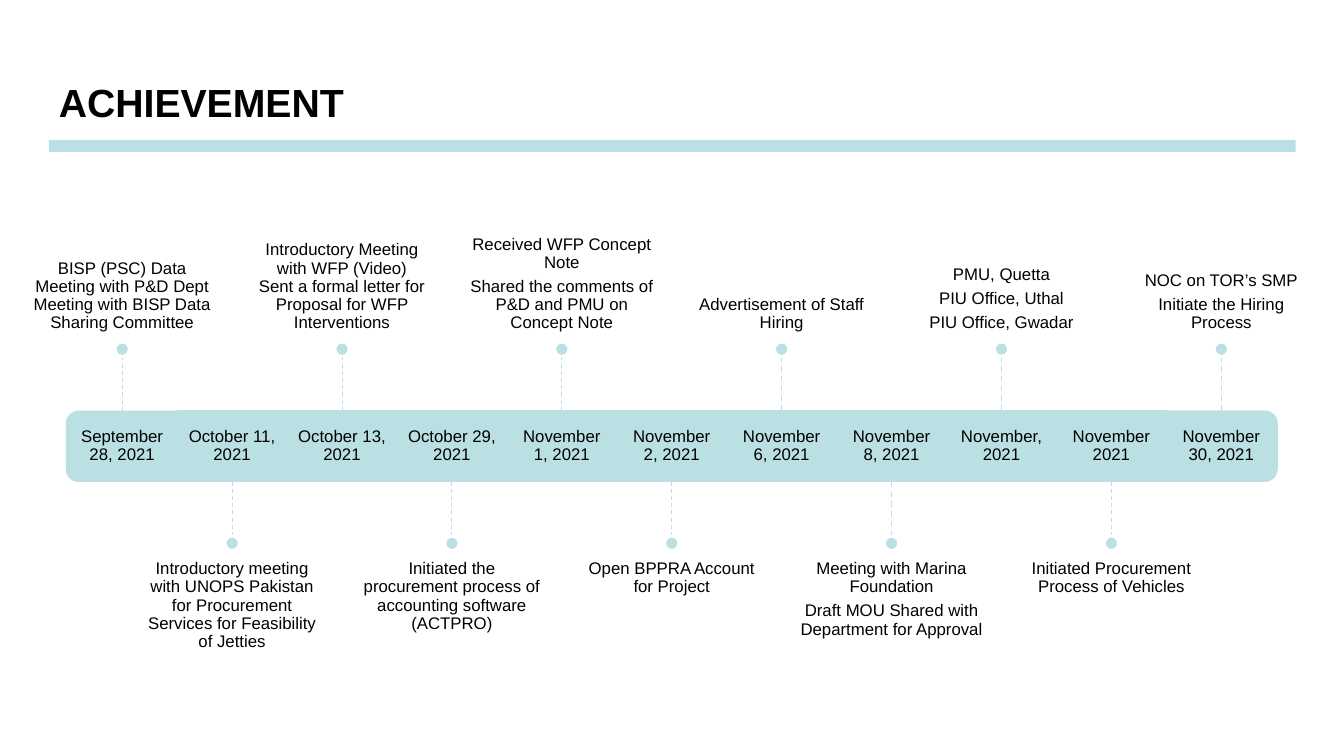
import copy

import pptx
import pptx.dml.color
import pptx.enum.dml
import pptx.enum.shapes
import pptx.enum.text
import pptx.oxml
import pptx.oxml.ns
import pptx.util

Cm, Pt = pptx.util.Cm, pptx.util.Pt
RGBColor = pptx.dml.color.RGBColor
Shape = pptx.enum.shapes.MSO_SHAPE
Anchor = pptx.enum.text.MSO_ANCHOR
Align = pptx.enum.text.PP_ALIGN
qn = pptx.oxml.ns.qn

AQUA = RGBColor(0xBB, 0xE0, 0xE3)
WHITE = RGBColor(0xFF, 0xFF, 0xFF)
BLACK = RGBColor(0x00, 0x00, 0x00)

# Content: date, stem width in points, paragraphs (\v breaks a line)
TITLE = "ACHIEVEMENT"
EVENTS = [
    ("September 28, 2021", 0.75,
     ["BISP (PSC) Data\vMeeting with P&D Dept\vMeeting with BISP Data Sharing Committee"]),
    ("October 11, 2021", 0.75,
     ["Introductory meeting with UNOPS Pakistan for Procurement Services for Feasibility of Jetties"]),
    ("October 13, 2021", 0.75,
     ["Introductory Meeting with WFP (Video)\vSent a formal letter for Proposal for WFP Interventions"]),
    ("October 29, 2021", 0.75,
     ["Initiated the procurement process of accounting software (ACTPRO)"]),
    ("November 1, 2021", 0.75,
     ["Received WFP Concept Note",
      "Shared the comments of P&D and PMU on Concept Note"]),
    ("November 2, 2021", 0.75, ["Open BPPRA Account for Project"]),
    ("November 6, 2021", 1, ["Advertisement of Staff Hiring"]),
    ("November 8, 2021", 1,
     ["Meeting with Marina Foundation",
      "Draft MOU Shared with Department for Approval"]),
    ("November, 2021", 1,
     ["PMU, Quetta", "PIU Office, Uthal", "PIU Office, Gwadar"]),
    ("November 2021", 0.75, ["Initiated Procurement Process of Vehicles"]),
    ("November 30, 2021", 1,
     ["NOC on TOR’s SMP", "Initiate the Hiring Process"]),
]

# Layout rules
FIRST_CENTRE, PITCH = Cm(3.08), Cm(2.77)
BAND_TOP, BAND_HEIGHT = Cm(10.38), Cm(1.73)
BAND_BOTTOM = BAND_TOP + BAND_HEIGHT
STEM, DOT = Cm(1.4), Cm(0.36)
NOTE_WIDTH, NOTE_HEIGHT = Cm(4.62), Cm(6.07)
INSET = Cm(0.25)


def set_values(target, values):
    for name, value in values.items():
        setattr(target, name, value)


def write(frame, texts, anchor, insets):
    left, top, right, bottom = insets
    set_values(frame, {"word_wrap": True, "vertical_anchor": anchor,
                       "margin_left": left, "margin_top": top,
                       "margin_right": right, "margin_bottom": bottom})
    for index, text in enumerate(texts):
        para = frame.add_paragraph() if index else frame.paragraphs[0]
        para.text = text
        set_values(para, {"alignment": Align.CENTER, "line_spacing": 0.9,
                          "space_after": Pt(4.2)})
        for span in para.runs:
            set_values(span.font, {"name": "Arial", "size": Pt(12)})
            span.font.color.rgb = BLACK
        # Line breaks take the same size as the text
        for line_break in para._p.findall(qn("a:br")):
            line_break.insert(0, copy.deepcopy(para.runs[0]._r.find(qn("a:rPr"))))


def add_filled(page, kind, box, line_color=None):
    shape = page.shapes.add_shape(kind, *box)
    shape.shadow.inherit = False
    shape.fill.solid()
    shape.fill.fore_color.rgb = AQUA
    if line_color is None:
        shape.line.fill.background()
    else:
        shape.line.color.rgb = line_color
        shape.line.width = Pt(2)
    return shape


def add_date(page, date, centre, rotation):
    left = centre - PITCH // 2
    box = (left, BAND_TOP, PITCH, BAND_HEIGHT)
    if rotation:
        # Rounded end: drawn upright, then turned about its middle
        middle = BAND_TOP + BAND_HEIGHT // 2
        turned = (centre - BAND_HEIGHT // 2, middle - PITCH // 2, BAND_HEIGHT, PITCH)
        cell = add_filled(page, Shape.ROUND_2_SAME_RECTANGLE, turned, AQUA)
        cell.rotation = rotation
        label = page.shapes.add_textbox(*box)
    else:
        cell = label = add_filled(page, Shape.RECTANGLE, box, AQUA)
    write(label.text_frame, [date], Anchor.MIDDLE, [INSET] * 4)
    return cell


def add_stem(page, cell, centre, start, end, width, site):
    stem = page.shapes.add_connector(
        pptx.enum.shapes.MSO_CONNECTOR.STRAIGHT, centre, start, centre, end)
    if not cell.rotation:
        stem.end_connect(cell, site)
    stem.line.color.rgb = AQUA
    set_values(stem.line, {"width": Pt(width),
                           "dash_style": pptx.enum.dml.MSO_LINE.DASH})
    stem._element.spPr.append(pptx.oxml.parse_xml(
        '<a:effectLst xmlns:a="http://schemas.openxmlformats.org/drawingml/2006/main"/>'))


def add_event(page, index, date, width, texts):
    centre = FIRST_CENTRE + index * PITCH
    rotation = {0: 270, len(EVENTS) - 1: 90}.get(index, 0)
    cell = add_date(page, date, centre, rotation)
    # Events alternate above and below the band
    if index % 2 == 0:
        start, end, site = BAND_TOP - STEM, BAND_TOP, 0
        dot_top = start - DOT
        note_top = dot_top - NOTE_HEIGHT
        anchor, insets = Anchor.BOTTOM, (0, 0, 0, INSET)
    else:
        start, end, site = BAND_BOTTOM + STEM, BAND_BOTTOM, 2
        dot_top = start
        note_top = dot_top + DOT
        anchor, insets = Anchor.TOP, (0, INSET, 0, 0)
    note = page.shapes.add_textbox(
        centre - NOTE_WIDTH // 2, note_top, NOTE_WIDTH, NOTE_HEIGHT)
    write(note.text_frame, texts, anchor, insets)
    add_stem(page, cell, centre, start, end, width, site)
    add_filled(page, Shape.OVAL, (centre - DOT // 2, dot_top, DOT, DOT), WHITE)


def add_title(page):
    title = page.shapes.title
    set_values(title, {"left": Cm(1.23), "top": Cm(1.85),
                       "width": Cm(19.02), "height": Cm(1.45)})
    title.text_frame.text = TITLE
    set_values(title.text_frame, {"vertical_anchor": Anchor.TOP, "word_wrap": True,
                                  "auto_size": pptx.enum.text.MSO_AUTO_SIZE.NONE})
    para = title.text_frame.paragraphs[0]
    para.alignment = Align.LEFT
    font = para.runs[0].font
    set_values(font, {"name": "Arial", "size": Pt(28), "bold": True})
    font.color.rgb = BLACK


def main():
    deck = pptx.Presentation()
    set_values(deck, {"slide_width": Cm(33.87), "slide_height": Cm(19.05)})
    page = deck.slides.add_slide(deck.slide_layouts[5])

    # Title and rule
    add_title(page)
    add_filled(page, Shape.RECTANGLE, (Cm(1.23), Cm(3.53), Cm(31.42), Cm(0.3)))

    # Timeline
    for index, (date, width, texts) in enumerate(EVENTS):
        add_event(page, index, date, width, texts)

    deck.save("out.pptx")


if __name__ == "__main__":
    main()
